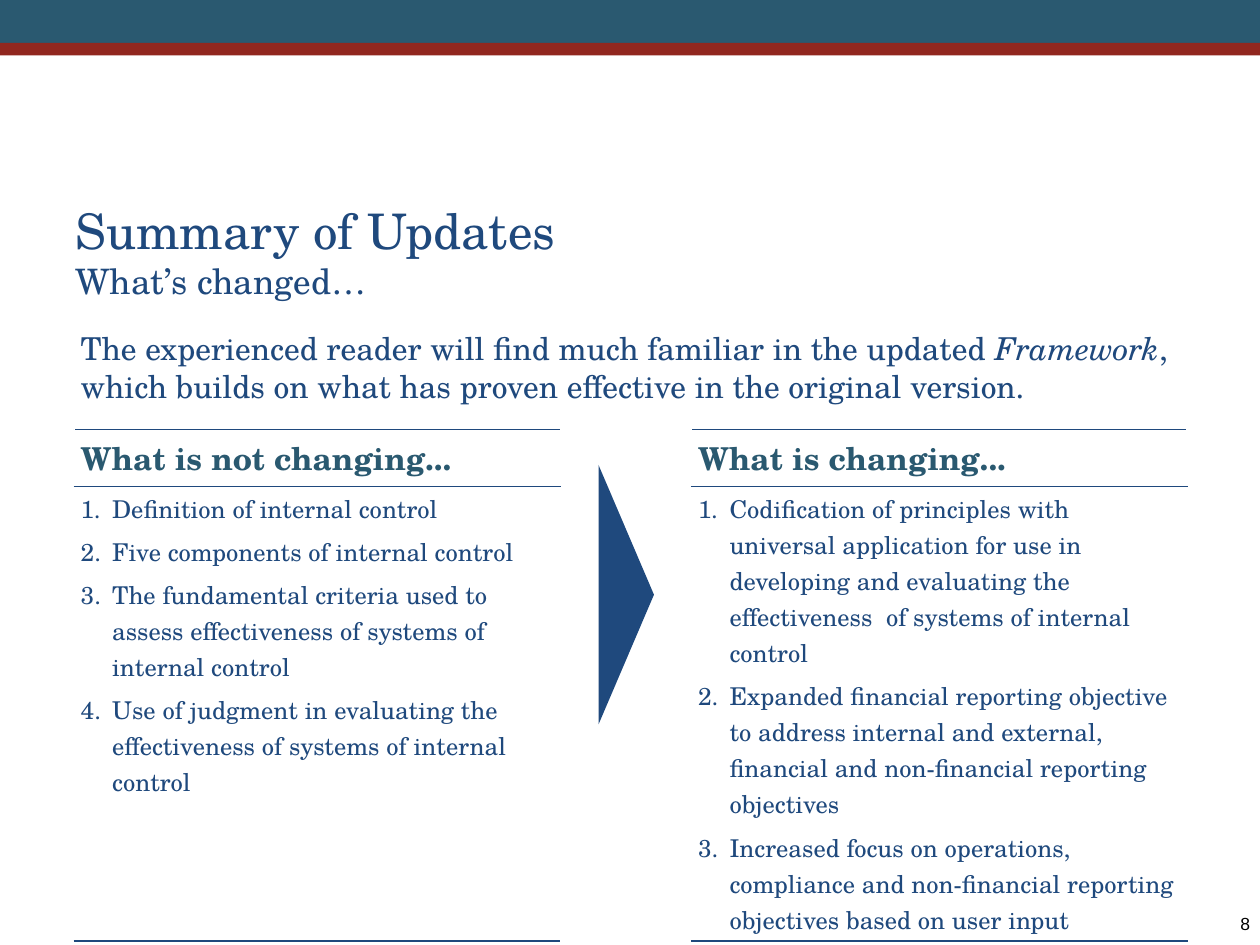
import pptx
import pptx.util
import pptx.dml.color
import pptx.enum.shapes
import pptx.enum.text
import pptx.oxml
import pptx.oxml.ns

Inches, Pt = pptx.util.Inches, pptx.util.Pt
RGB = pptx.dml.color.RGBColor
SHAPE = pptx.enum.shapes.MSO_SHAPE
ALIGN = pptx.enum.text.PP_ALIGN
ANCHOR = pptx.enum.text.MSO_ANCHOR

NAVY = RGB(0x1F, 0x49, 0x7D)
TEAL = RGB(0x2A, 0x59, 0x70)
RED = RGB(0x91, 0x27, 0x1F)
BLACK = RGB(0, 0, 0)
SERIF = "TeX Gyre Schola"

TITLE = "Summary of Updates"
SUB = "What’s changed…"
INTRO = [
    ("The experienced reader will find much familiar in the updated ", False),
    ("Framework", True),
    (", which builds on what has proven effective in the original version.", False),
]
# table column, heading, numbered points
LISTS = [
    (0, "What is not changing...", [
        "Definition of internal control",
        "Five components of internal control",
        "The fundamental criteria used to assess effectiveness of systems of "
        "internal control",
        "Use of judgment in evaluating the effectiveness of systems of "
        "internal control",
    ]),
    (2, "What is changing...", [
        "Codification of principles with universal application for use in "
        "developing and evaluating the effectiveness  of systems of internal control",
        "Expanded financial reporting objective to address internal and external, "
        "financial and non-financial reporting objectives",
        "Increased focus on operations, compliance and non-financial reporting "
        "objectives based on user input",
    ]),
]
BANDS = [(0, 0.34, TEAL), (0.34, 0.1, RED)]
COLS = [3.86, 1.04, 3.93]
ROWS = [0.45, 3.61]
LEFT, WIDTH = 0.59, sum(COLS)


def write(para, text, size=18, color=NAVY, bold=False, italic=False, font=SERIF):
    run = para.add_run()
    run.text = text
    face = run.font
    face.name, face.size = font, Pt(size)
    face.bold, face.italic = bold, italic
    face.color.rgb = color


def add_xml(node, xml, index=None):
    """Put a drawing element into node, at its end unless index is given."""
    tag, rest = xml.split(" ", 1)
    item = pptx.oxml.parse_xml(f"<a:{tag} {pptx.oxml.ns.nsdecls('a')} {rest}")
    node.insert(len(node) if index is None else index, item)


def number(para):
    para.level = 1
    props = para._p.get_or_add_pPr()
    props.set("marL", str(Inches(0.25)))
    props.set("indent", str(Inches(-0.25)))
    add_xml(props, f'buClr ><a:srgbClr val="{NAVY}"/></a:buClr>')
    add_xml(props, 'buFont typeface="+mj-lt"/>')
    add_xml(props, 'buAutoNum type="arabicPeriod"/>')


def rule(cell):
    """Draw the lines above and below a cell."""
    props = cell._tc.get_or_add_tcPr()
    for side in ("lnB", "lnT"):
        add_xml(props, f'{side} w="{Pt(1)}"><a:solidFill><a:srgbClr val="{NAVY}"/>'
                       f'</a:solidFill></a:{side}>', 0)


def inset(box, side, top):
    box.margin_left = box.margin_right = Inches(side)
    box.margin_top = box.margin_bottom = Inches(top)


def add_shape(slide, kind, place, color):
    shape = slide.shapes.add_shape(kind, *map(Inches, place))
    shape.shadow.inherit = False
    shape.fill.solid()
    shape.fill.fore_color.rgb = color
    shape.line.fill.background()
    return shape


def add_box(slide, place, side, top):
    frame = slide.shapes.add_textbox(*map(Inches, place)).text_frame
    frame.word_wrap = True
    inset(frame, side, top)
    return frame.paragraphs[0]


def add_title(slide):
    title = slide.shapes.title
    title.left, title.top = Inches(0.5), Inches(1.41)
    title.width, title.height = Inches(9.33), Inches(1.17)
    title.text_frame.vertical_anchor = ANCHOR.MIDDLE
    para = title.text_frame.paragraphs[0]
    para.alignment = ALIGN.LEFT
    write(para, TITLE, size=28)
    para.add_line_break()
    write(para, SUB, size=20)


def add_lists(slide):
    place = (LEFT, 3.41, WIDTH, sum(ROWS))
    table = slide.shapes.add_table(2, 3, *map(Inches, place)).table
    table.first_row = table.horz_banding = False
    for col, width in zip(table.columns, COLS):
        col.width = Inches(width)
    for row, height in zip(table.rows, ROWS):
        row.height = Inches(height)
    for cell in table.iter_cells():
        cell.fill.background()
        inset(cell, 0.05, 0.03)
    table.cell(0, 1).merge(table.cell(1, 1))

    for col, head, points in LISTS:
        for row, lines in enumerate(([head], points)):
            cell = table.cell(row, col)
            rule(cell)
            for i, line in enumerate(lines):
                frame = cell.text_frame
                para = frame.add_paragraph() if i else frame.paragraphs[0]
                para.space_after = Pt(4)
                if row:
                    number(para)
                    write(para, line, size=14)
                else:
                    write(para, line, color=TEAL, bold=True)


def main():
    deck = pptx.Presentation()
    deck.slide_width, deck.slide_height = Inches(10), Inches(7.5)
    slide = deck.slides.add_slide(deck.slide_layouts[5])

    for top, height, color in BANDS:
        add_shape(slide, SHAPE.RECTANGLE, (0, top, 10, height), color)
    page = add_box(slide, (8.25, 7.25, 1.67, 0.17), 0, 0)
    page.alignment = ALIGN.RIGHT
    write(page, "8", size=10, color=BLACK, font="Arial")

    add_title(slide)
    add_lists(slide)
    intro = add_box(slide, (LEFT, 2.58, WIDTH, 0.7), 0.05, 0.03)
    for text, italic in INTRO:
        write(intro, text, italic=italic)
    arrow = add_shape(slide, SHAPE.ISOSCELES_TRIANGLE, (3.94, 4.5, 2.06, 0.44), NAVY)
    arrow.rotation = 90
    deck.save("out.pptx")


if __name__ == "__main__":
    main()
